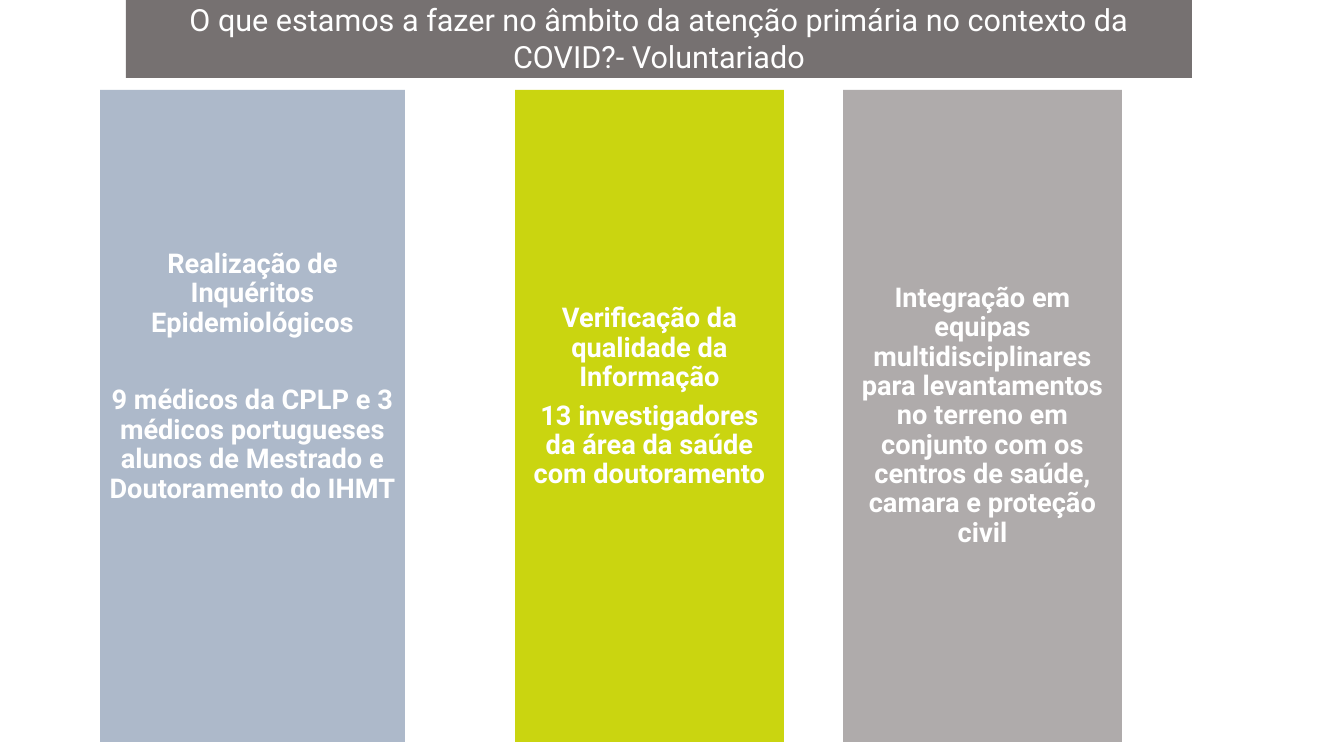
import pptx
import pptx.util
import pptx.dml.color
import pptx.enum.shapes
import pptx.enum.text

HEADING = {
    "paragraphs": ["O que estamos a fazer no âmbito da atenção primária no contexto da COVID?- Voluntariado"],
    "box": (126, -2, 1066, 80),
}
ACTIVITIES = [
    {"paragraphs": ["Realização de Inquéritos Epidemiológicos",
                    "9 médicos da CPLP e 3 médicos portugueses alunos de Mestrado e Doutoramento do IHMT"],
     "left": 100, "width": 305, "fill": "ADB9CA", "gap": 57, "lift": 39},
    {"paragraphs": ["Verificação da qualidade da Informação",
                    "13 investigadores da área da saúde com doutoramento"],
     "left": 515, "width": 269, "fill": "CAD510", "gap": 11, "lift": 19},
    {"paragraphs": ["Integração em equipas multidisciplinares para levantamentos no terreno "
                    "em conjunto com os centros de saúde, camara e proteção civil"],
     "left": 843, "width": 279, "fill": "AFABAB", "gap": 0, "lift": 0},
]
THEME = {"font": "Roboto", "text": "FFFFFF", "heading_fill": "767171",
         "heading_size": 36, "activity_size": 32}
SLIDE_WIDTH, SLIDE_HEIGHT = 1344, 756
COLUMN_TOP, COLUMN_HEIGHT = 90, 652
INSET = 8
EMU_PER_PX = 14961


def px(length):
    return pptx.util.Emu(length * EMU_PER_PX)


def color(value):
    return pptx.dml.color.RGBColor.from_string(value)


def add_panel(slide, box, paragraphs, fill, size, bold=False, line_spacing=1.0,
              gap=0, lift=0, inset_y=INSET):
    panel = slide.shapes.add_shape(pptx.enum.shapes.MSO_SHAPE.RECTANGLE, *map(px, box))
    panel.shadow.inherit = False
    panel.fill.solid()
    panel.fill.fore_color.rgb = color(fill)
    panel.line.fill.background()
    frame = panel.text_frame
    frame.word_wrap = True
    frame.vertical_anchor = pptx.enum.text.MSO_ANCHOR.MIDDLE
    frame.margin_left = frame.margin_right = px(INSET)
    frame.margin_top = px(inset_y)
    frame.margin_bottom = px(inset_y + 2 * lift)
    frame.text = "\n".join(paragraphs)
    for index, paragraph in enumerate(frame.paragraphs):
        paragraph.alignment = pptx.enum.text.PP_ALIGN.CENTER
        paragraph.line_spacing = line_spacing
        paragraph.space_before = pptx.util.Pt(gap if index else 0)
        for run in paragraph.runs:
            run.font.name = THEME["font"]
            run.font.size = pptx.util.Pt(size)
            run.font.bold = bold
            run.font.color.rgb = color(THEME["text"])


def main():
    deck = pptx.Presentation()
    deck.slide_width, deck.slide_height = px(SLIDE_WIDTH), px(SLIDE_HEIGHT)
    slide = deck.slides.add_slide(deck.slide_layouts[6])
    for activity in ACTIVITIES:
        box = (activity["left"], COLUMN_TOP, activity["width"], COLUMN_HEIGHT)
        add_panel(slide, box, activity["paragraphs"], activity["fill"], THEME["activity_size"],
                  bold=True, line_spacing=0.9, gap=activity["gap"], lift=activity["lift"])
    add_panel(slide, HEADING["box"], HEADING["paragraphs"], THEME["heading_fill"],
              THEME["heading_size"], inset_y=3)
    deck.save("out.pptx")


if __name__ == "__main__":
    main()
